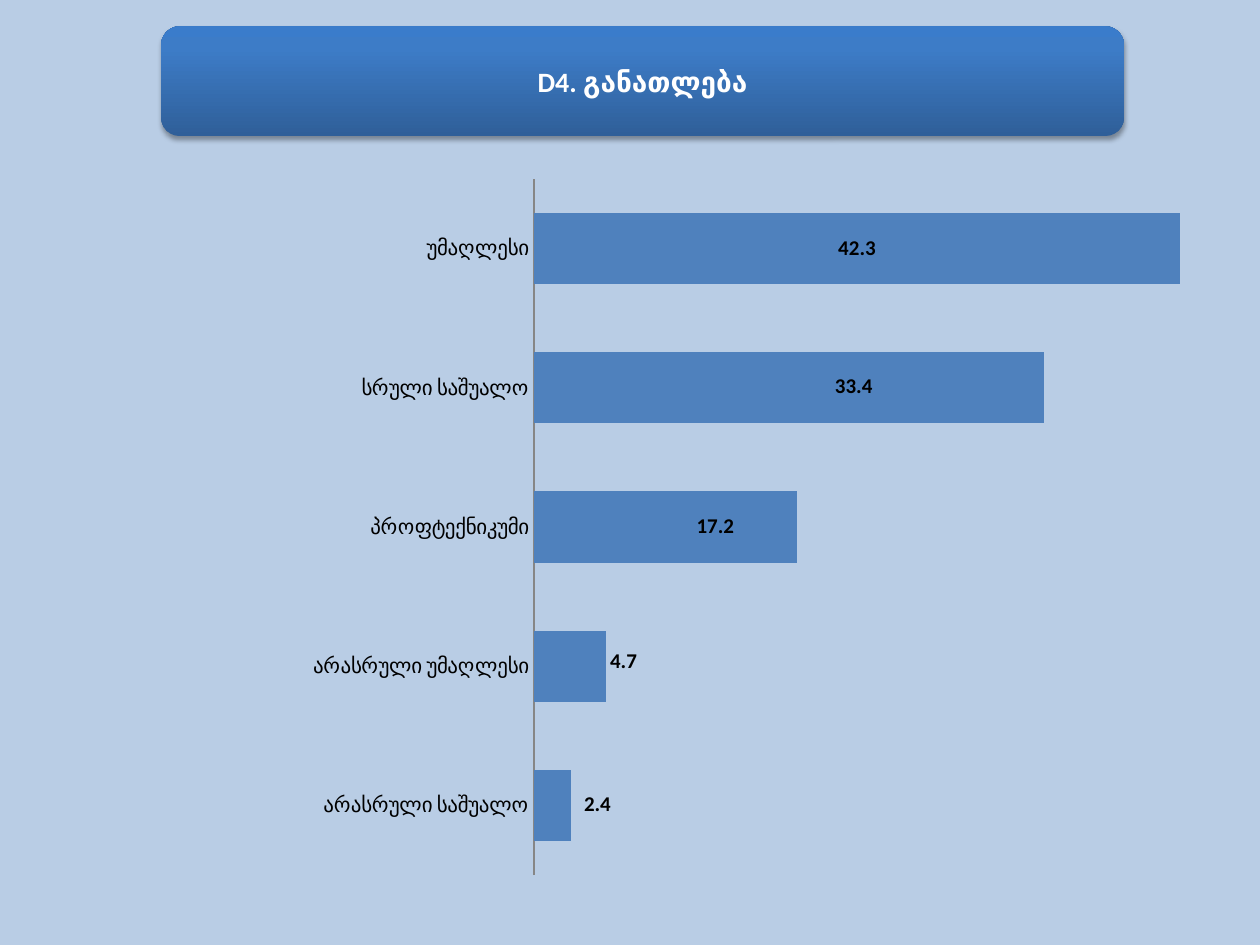
import pptx
import pptx.chart.data
import pptx.dml.color
import pptx.enum.chart
import pptx.enum.shapes
import pptx.enum.text
import pptx.oxml
import pptx.oxml.ns
import pptx.util

Inches = pptx.util.Inches
Pt = pptx.util.Pt

# category, value, label shift as fractions of the chart size
EDUCATION = [
    ("არასრული საშუალო", 2.4, (0.037, -0.002)),
    ("არასრული უმაღლესი", 4.7, (0.044, -0.007)),
    ("პროფტექნიკუმი", 17.2, (0.041, -0.001)),
    ("სრული საშუალო", 33.4, (0.053, -0.002)),
    ("უმაღლესი", 42.3, None),
]
BANNER_STOPS = [(0, "2F5F99"), (80, "3D7CC7"), (100, "3A7CCB")]


def color(value):
    return pptx.dml.color.RGBColor.from_string(value)


def xml(tag, content):
    """Parse one drawing or chart element from its tag and inner markup."""
    namespaces = pptx.oxml.ns.nsdecls("a", "c")
    return pptx.oxml.parse_xml(f"<{tag} {namespaces}>{content}</{tag}>")


def manual_layout(**settings):
    content = "".join(f'<c:{name} val="{value}"/>' for name, value in settings.items())
    return xml("c:layout", f"<c:manualLayout>{content}</c:manualLayout>")


class SlideBuilder:
    font_name = "Calibri"
    text_color = "000000"
    bar_color = "4F81BD"
    axis_color = "868686"

    def __init__(self, presentation, background):
        self.slide = presentation.slides.add_slide(presentation.slide_layouts[5])
        fill = self.slide.background.fill
        fill.solid()
        fill.fore_color.rgb = color(background)

    def style_font(self, font, size, font_color, bold=False):
        font.name = self.font_name
        font.size = Pt(size)
        font.bold = bold
        font.color.rgb = color(font_color)

    def banner(self, left, top, width, height):
        shape = self.slide.shapes.add_shape(
            pptx.enum.shapes.MSO_SHAPE.ROUNDED_RECTANGLE,
            Inches(left), Inches(top), Inches(width), Inches(height),
        )
        stops = "".join(
            f'<a:gs pos="{position * 1000}"><a:srgbClr val="{value}"/></a:gs>'
            for position, value in BANNER_STOPS
        )
        shadow = (
            f'<a:outerShdw blurRad="{Pt(3.1)}" dist="{Pt(1.8)}" dir="5400000" rotWithShape="0">'
            '<a:srgbClr val="000000"><a:alpha val="35000"/></a:srgbClr></a:outerShdw>'
        )
        shape.line.fill.background()
        properties = shape.element.spPr
        outline = properties.find(pptx.oxml.ns.qn("a:ln"))
        outline.addprevious(
            xml("a:gradFill", f'<a:gsLst>{stops}</a:gsLst><a:lin ang="16200000" scaled="0"/>')
        )
        outline.addnext(xml("a:effectLst", shadow))

    def title(self, text, left, top, width, height):
        """Write the title in its placeholder, in front of its banner."""
        self.banner(left, top, width, height)
        title = self.slide.shapes.title
        title.left, title.top = Inches(left), Inches(top)
        title.width, title.height = Inches(width), Inches(height)
        title.element.getparent().append(title.element)
        frame = title.text_frame
        frame.text = text
        frame.vertical_anchor = pptx.enum.text.MSO_ANCHOR.MIDDLE
        paragraph = frame.paragraphs[0]
        paragraph.alignment = pptx.enum.text.PP_ALIGN.CENTER
        self.style_font(paragraph.font, 16, "FFFFFF", bold=True)

    def bar_chart(self, rows, left, top, width, height):
        data = pptx.chart.data.CategoryChartData(number_format="###0.0")
        data.categories = [category for category, _, _ in rows]
        data.add_series("Series 1", [value for _, value, _ in rows])
        chart = self.slide.shapes.add_chart(
            pptx.enum.chart.XL_CHART_TYPE.BAR_STACKED,
            Inches(left), Inches(top), Inches(width), Inches(height), data,
        ).chart
        chart.has_legend = False
        chart.has_title = False
        self.style_font(chart.font, 12, self.text_color)
        self.style_axes(chart)

        plot = chart.plots[0]
        plot.gap_width = 95
        plot.overlap = 100
        plot.vary_by_categories = False
        series = plot.series[0]
        series.format.fill.solid()
        series.format.fill.fore_color.rgb = color(self.bar_color)
        self.label_bars(chart, series, [shift for _, _, shift in rows])

        plot_area = chart._chartSpace.xpath("c:chart/c:plotArea")[0]
        for layout in plot_area.xpath("c:layout"):
            plot_area.remove(layout)
        plot_area.insert(0, manual_layout(
            layoutTarget="inner", xMode="edge", yMode="edge",
            x=0.425, y=0.019, w=0.563, h=0.948,
        ))

    def style_axes(self, chart):
        category_axis = chart.category_axis
        category_axis.major_tick_mark = pptx.enum.chart.XL_TICK_MARK.NONE
        category_axis.format.line.color.rgb = color(self.axis_color)
        value_axis = chart.value_axis
        value_axis.minimum_scale = 0
        value_axis.maximum_scale = 45
        value_axis.has_major_gridlines = False
        value_axis.tick_labels.number_format = "###0.0"
        value_axis.tick_labels.number_format_is_linked = False
        value_axis.visible = False

    def label_bars(self, chart, series, shifts):
        labels = series.data_labels
        labels.show_value = True
        labels.number_format = "###0.0"
        labels.number_format_is_linked = False
        self.style_font(labels.font, 12, self.text_color, bold=True)
        for index, shift in enumerate(shifts):
            if shift:
                font = series.points[index].data_label.font
                self.style_font(font, 12, self.text_color, bold=True)
                label = chart._chartSpace.xpath(f".//c:dLbl[c:idx/@val='{index}']")[0]
                label.insert(1, manual_layout(x=shift[0], y=shift[1]))
        for leader_lines in chart._chartSpace.xpath(".//c:showLeaderLines"):
            leader_lines.set("val", "0")


def main():
    presentation = pptx.Presentation()
    presentation.slide_width = Inches(10)
    presentation.slide_height = Inches(7.5)
    builder = SlideBuilder(presentation, "B9CDE5")
    builder.title("D4. განათლება", 1.28, 0.21, 7.64, 0.87)
    builder.bar_chart(EDUCATION, 0.12, 1.31, 9.69, 5.83)
    presentation.save("out.pptx")


if __name__ == "__main__":
    main()
